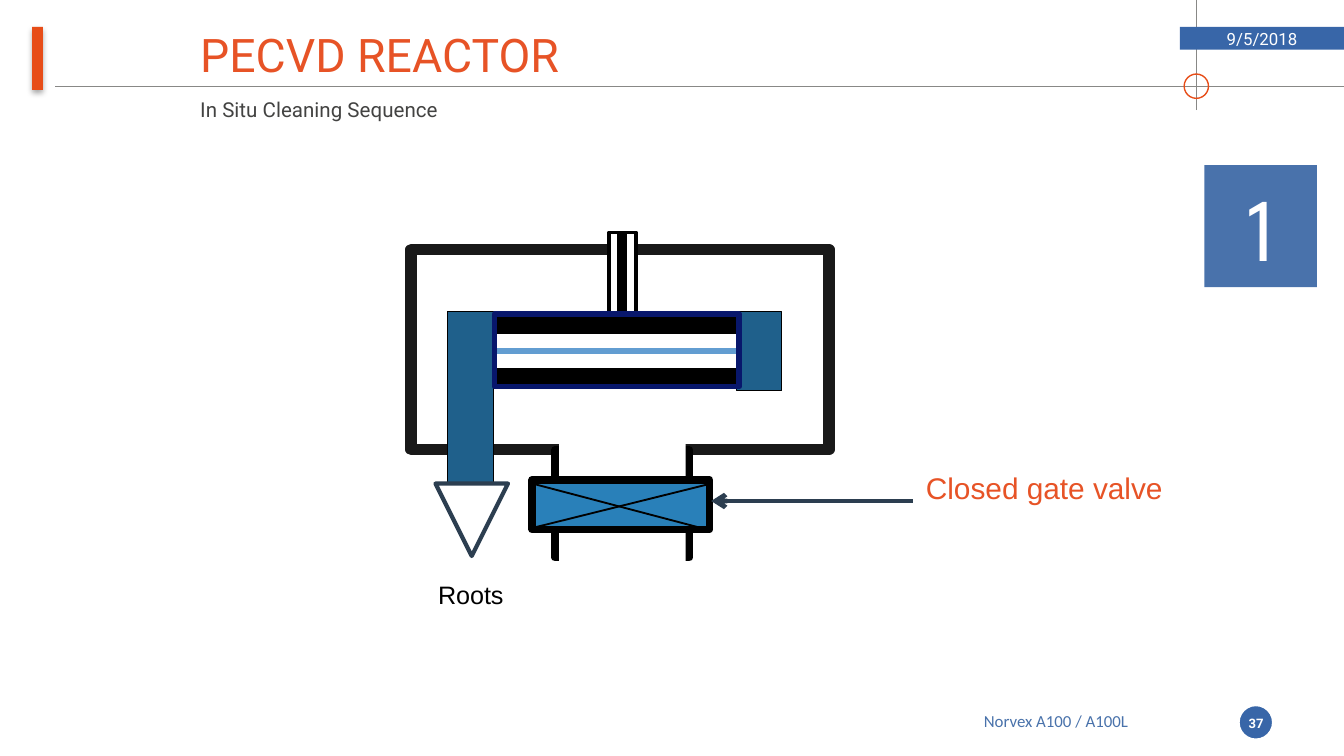
from pptx import Presentation
from pptx.dml.color import RGBColor
from pptx.enum.shapes import MSO_CONNECTOR as Link, MSO_SHAPE as Kind
from pptx.enum.text import MSO_ANCHOR as Anchor, MSO_AUTO_SIZE as Fit, PP_ALIGN as Align
from pptx.oxml import parse_xml
from pptx.oxml.ns import nsdecls
from pptx.util import Cm, Pt

WHITE = RGBColor(0xFF, 0xFF, 0xFF)
BLACK = RGBColor(0x00, 0x00, 0x00)
GREY = RGBColor(0x88, 0x88, 0x86)
TEXT = RGBColor(0x43, 0x43, 0x42)
ACCENT = RGBColor(0xE7, 0x4D, 0x18)
ORANGE = RGBColor(0xE7, 0x53, 0x26)
BLUE = RGBColor(0x38, 0x66, 0xA8)
STEEL = RGBColor(0x49, 0x72, 0xAB)
WALL = RGBColor(0x19, 0x19, 0x19)
PLASMA = RGBColor(0x62, 0x9D, 0xD1)
VALVE = RGBColor(0x29, 0x80, 0xB9)
PIPE = RGBColor(0x1F, 0x60, 0x8B)
SLATE = RGBColor(0x2C, 0x3E, 0x50)
NAVY = RGBColor(0x08, 0x17, 0x6C)

deck = Presentation()
deck.slide_width, deck.slide_height = Cm(25.4), Cm(14.29)
slide = deck.slides.add_slide(deck.slide_layouts[2])
shapes = slide.shapes


def draw(kind, box, fill=None, line=None, width=0):
    """Add a line (box is x1, y1, x2, y2) or a shape (box is x, y, w, h)."""
    box = [Cm(v) for v in box]
    if isinstance(kind, Link):
        item = shapes.add_connector(kind, *box)
        item._element.spPr.append(parse_xml(f"<a:effectLst {nsdecls('a')}/>"))
    else:
        item = shapes.add_shape(kind, *box)
        item.shadow.inherit = False
        if fill is None:
            item.fill.background()
        else:
            item.fill.solid()
            item.fill.fore_color.rgb = fill
    if line is None:
        item.line.fill.background()
    else:
        item.line.color.rgb = line
        item.line.width = Pt(width)
    return item


def write(item, text, size, font, color, align=Align.LEFT, anchor=Anchor.TOP,
          bold=False, wrap=True):
    frame = item.text_frame
    frame.text = text
    frame.word_wrap = wrap
    frame.auto_size = Fit.NONE
    frame.vertical_anchor = anchor
    par = frame.paragraphs[0]
    par.alignment = align
    par.space_before = Pt(0)
    face = par.runs[0].font
    face.size, face.name, face.bold = Pt(size), font, bold
    face.color.rgb = color


# Frame of the page
draw(Link.STRAIGHT, (1.04, 1.63, 25.4, 1.63), line=GREY, width=0.75)
draw(Link.STRAIGHT, (22.61, 2.08, 22.61, 0), line=GREY, width=0.75)
draw(Kind.OVAL, (22.38, 1.4, 0.46, 0.46), line=ACCENT, width=0.75)
bar = draw(Kind.RECTANGLE, (0.61, 0.51, 0.2, 1.19), ACCENT)
bar._element.spPr.find("{*}effectLst").append(parse_xml(
    f'<a:outerShdw {nsdecls("a")} blurRad="39370" dist="23000" dir="5400000" rotWithShape="0">'
    '<a:srgbClr val="000000"><a:alpha val="35000"/></a:srgbClr></a:outerShdw>'))
draw(Kind.OVAL, (23.39, 13.31, 0.69, 0.69), BLUE, WHITE, 2.25)

title, body = shapes.title, slide.placeholders[1]
for item, box in ((title, (3.53, 0.36, 18.77, 1.32)), (body, (3.53, 1.7, 7.01, 0.71))):
    item.left, item.top, item.width, item.height = [Cm(v) for v in box]
write(title, "PECVD REACTOR", 24.8, "Roboto", ORANGE, anchor=Anchor.MIDDLE)
write(body, "In Situ Cleaning Sequence", 11, "Roboto", TEXT)

date = draw(Kind.RECTANGLE, (22.3, 0.51, 3.1, 0.43), BLUE)
write(date, "9/5/2018", 9, "Roboto", WHITE, Align.CENTER, Anchor.MIDDLE)
footer = draw(Kind.RECTANGLE, (17.3, 13.31, 5.31, 0.64), WHITE)
write(footer, "Norvex A100 / A100L", 9, "Calibri", STEEL, Align.CENTER, Anchor.MIDDLE)
page = shapes.add_textbox(Cm(23.32), Cm(13.31), Cm(0.84), Cm(0.71))
page.text_frame.margin_left = page.text_frame.margin_right = 0
write(page, "37", 7, "Roboto", WHITE, Align.CENTER, Anchor.MIDDLE, bold=True)
step = draw(Kind.RECTANGLE, (22.76, 3.12, 2.13, 2.31), STEEL)
write(step, "1", 48, "League Spartan", WHITE, Align.CENTER)

# Chamber, electrodes and gas inlet
draw(Kind.RECTANGLE, (7.77, 4.72, 7.9, 3.78), line=WALL, width=6)
draw(Link.STRAIGHT, (9.4, 6.15, 13.94, 6.15), line=BLACK, width=9.13)
draw(Link.STRAIGHT, (9.32, 7.14, 13.97, 7.14), line=BLACK, width=10)
draw(Kind.RECTANGLE, (11.51, 4.39, 0.51, 1.6), WHITE, BLACK, 1.75)
draw(Link.STRAIGHT, (11.76, 6.1, 11.76, 4.42), line=BLACK, width=5.38)
draw(Link.STRAIGHT, (9.19, 6.63, 14.12, 6.63), line=PLASMA, width=3)

# Outlet duct, open at both ends, with its gate valve
draw(Kind.RECTANGLE, (10.49, 8.51, 2.54, 2.03), WHITE, BLACK, 4.13)
draw(Kind.RECTANGLE, (10.57, 8.31, 2.39, 2.36), WHITE)
draw(Kind.RECTANGLE, (10.06, 9.07, 3.35, 0.94), VALVE, BLACK, 4.13)
for start, end in ((9.98, 9.14), (9.14, 10.03)):
    draw(Link.STRAIGHT, (10.06, start, 13.44, end), line=BLACK, width=1)

# Pumping pipes and reactor liner
for left, height in ((8.46, 3.25), (13.92, 1.5)):
    draw(Kind.RECTANGLE, (left, 5.89, 0.86, height), PIPE, BLACK, 0.5)
pump = draw(Kind.ISOSCELES_TRIANGLE, (8.23, 9.14, 1.37, 1.37), line=SLATE, width=2.25)
pump.rotation = 180
draw(Kind.RECTANGLE, (9.35, 5.94, 4.62, 1.37), line=NAVY, width=3)

# Labels
roots = shapes.add_textbox(Cm(8.03), Cm(10.82), Cm(2.29), Cm(1.22))
write(roots, "Roots", 13.5, "Arial", BLACK, wrap=False)
label = shapes.add_textbox(Cm(17.25), Cm(8.76), Cm(5.51), Cm(1.12))
write(label, "Closed gate valve", 16, "Arial", ORANGE)
arrow = draw(Link.STRAIGHT, (17.25, 9.47, 13.44, 9.47), line=SLATE, width=2.5)
arrow.line._get_or_add_ln().append(parse_xml(f'<a:tailEnd {nsdecls("a")} type="arrow"/>'))

deck.save("out.pptx")
